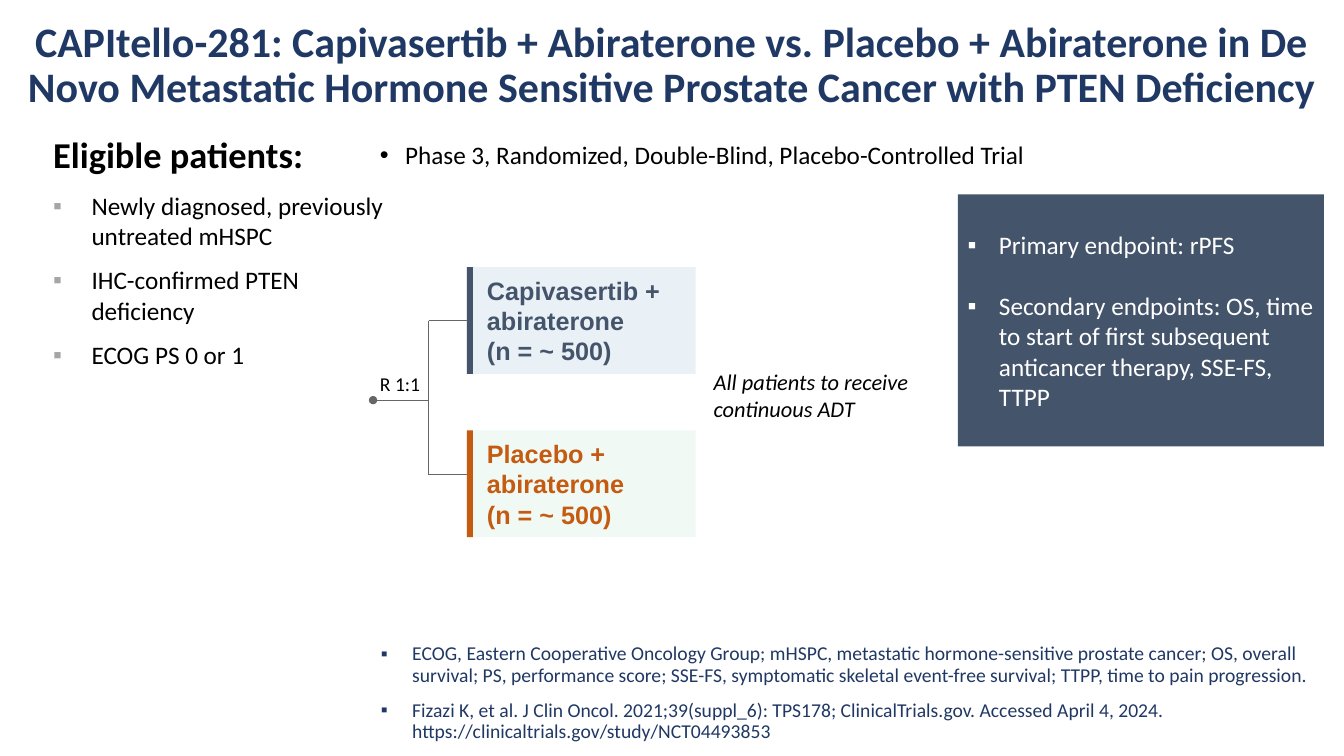
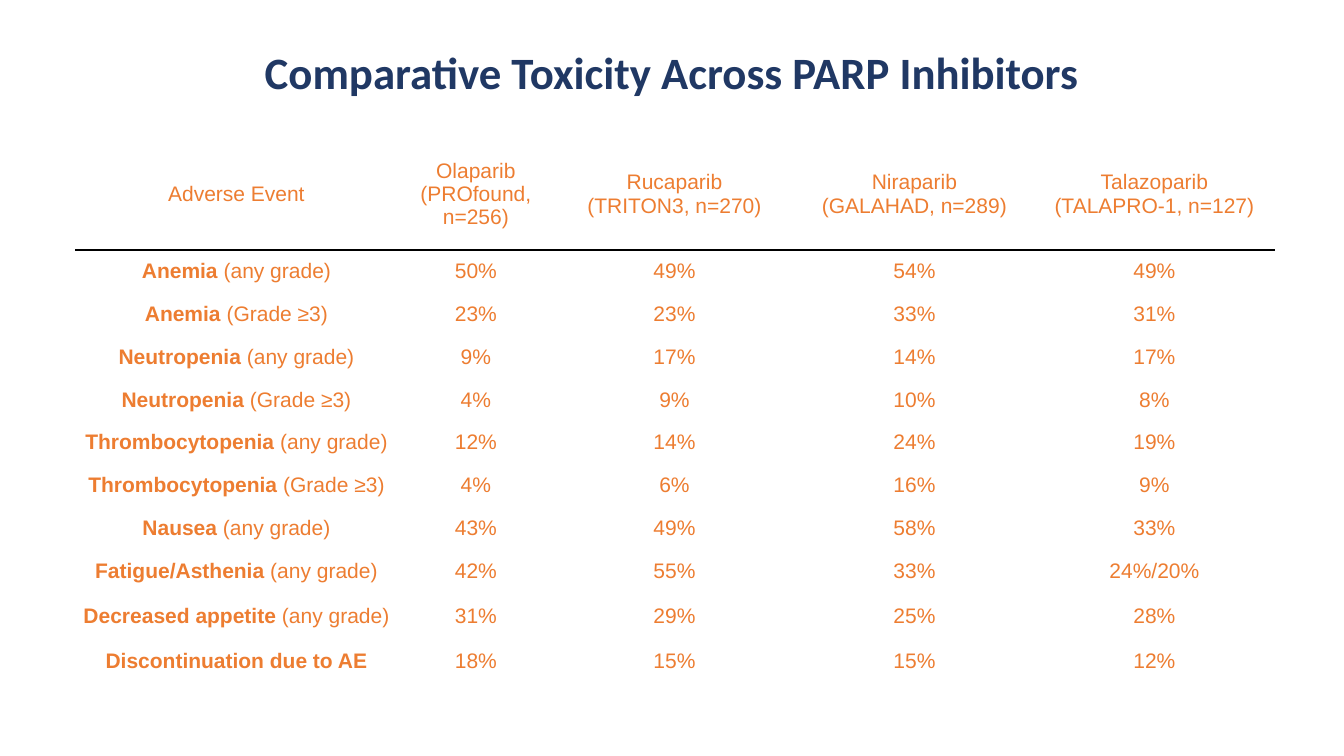
from dataclasses import dataclass

from lxml import etree
from pptx import Presentation
from pptx import util as u
from pptx.dml.color import RGBColor
from pptx.enum import shapes, text
from pptx.oxml.ns import qn

NAVY = RGBColor(0x20, 0x38, 0x64)
SLATE = RGBColor(0x44, 0x54, 0x6A)
RUST = RGBColor(0xC5, 0x5A, 0x11)
ORANGE = RGBColor(0xED, 0x7D, 0x31)
PALE_BLUE = RGBColor(0xE9, 0xF1, 0xF7)
PALE_GREEN = RGBColor(0xF0, 0xF9, 0xF3)
LINE_GRAY = RGBColor(0x66, 0x66, 0x66)
BULLET_GRAY = RGBColor(0xA5, 0xA5, 0xA5)
BLACK = RGBColor(0, 0, 0)
WHITE = RGBColor(0xFF, 0xFF, 0xFF)
BODY_FONT, ARM_FONT = "Calibri", "Arial"
SLIDE_W, SLIDE_H = 13.33, 7.5
TITLE_H = 0.78
SQUARE, DOT = "▪", "•"


@dataclass(frozen=True)
class Box:
    """A region of the slide, in inches."""
    left: float
    top: float
    width: float
    height: float

    def inner(self, left, top, width, height):
        """A box given relative to this one's top left corner."""
        return Box(self.left + left, self.top + top, width, height)

    def emu(self):
        return [u.Inches(v) for v in (self.left, self.top, self.width, self.height)]


def style(paragraph, size, color, font=BODY_FONT, bold=False, italic=False):
    face = paragraph.font
    face.name, face.size = font, u.Pt(size)
    face.bold, face.italic = bold, italic
    face.color.rgb = color


def add_bullet(paragraph, char, indent, color=None):
    props = paragraph._p.get_or_add_pPr()
    props.set("marL", str(u.Inches(indent)))
    props.set("indent", str(-u.Inches(indent)))
    if color is not None:
        tint = etree.SubElement(props, qn("a:buClr"))
        etree.SubElement(tint, qn("a:srgbClr"), val=str(color))
    etree.SubElement(props, qn("a:buFont"), typeface="Arial")
    etree.SubElement(props, qn("a:buChar"), char=char)


def write(frame, lines, size, color, bullet=None, spacing=1.0, gap=0, **face):
    """Fill a frame with equally styled paragraphs; bullet is (char, indent[, color])."""
    frame.word_wrap = True
    for index, line in enumerate(lines):
        paragraph = frame.paragraphs[0] if index == 0 else frame.add_paragraph()
        paragraph.text = line
        paragraph.line_spacing = spacing
        if index:
            paragraph.space_before = u.Pt(gap)
        if bullet:
            add_bullet(paragraph, *bullet)
        style(paragraph, size, color, **face)


def add_text(slide, box, lines, size, color, **options):
    frame = slide.shapes.add_textbox(*box.emu()).text_frame
    write(frame, lines, size, color, **options)
    return frame


def add_panel(slide, box, fill):
    panel = slide.shapes.add_shape(shapes.MSO_SHAPE.RECTANGLE, *box.emu())
    panel.shadow.inherit = False
    panel.fill.solid()
    panel.fill.fore_color.rgb = fill
    panel.line.fill.background()
    frame = panel.text_frame
    frame.vertical_anchor = text.MSO_ANCHOR.MIDDLE
    return frame


def add_line(slide, start, end, tail=None):
    line = slide.shapes.add_connector(
        shapes.MSO_CONNECTOR.STRAIGHT, *(u.Inches(v) for v in (*start, *end)))
    line.line.color.rgb = LINE_GRAY
    line.line.width = u.Pt(0.75)
    if tail:
        etree.SubElement(line.line._get_or_add_ln(), qn("a:tailEnd"), type=tail)
    etree.SubElement(line._element.spPr, qn("a:effectLst"))


def titled_slide(deck, title, top, size):
    slide = deck.slides.add_slide(deck.slide_layouts[5])
    heading = slide.shapes.title
    heading.left, heading.top, heading.width, heading.height = Box(
        0, top, SLIDE_W, TITLE_H).emu()
    frame = heading.text_frame
    frame.auto_size = text.MSO_AUTO_SIZE.NONE
    frame.vertical_anchor = text.MSO_ANCHOR.MIDDLE
    write(frame, [title], size, NAVY, spacing=0.9, bold=True)
    frame.paragraphs[0].alignment = text.PP_ALIGN.CENTER
    return slide


def eligibility(slide, box):
    frame = add_text(slide, box, ["Eligible patients:"], 26, BLACK, spacing=0.9, bold=True)
    for criterion in ("Newly diagnosed, previously untreated mHSPC",
                      "IHC-confirmed PTEN deficiency", "ECOG PS 0 or 1"):
        paragraph = frame.add_paragraph()
        paragraph.text = criterion
        paragraph.space_before = u.Pt(10)
        add_bullet(paragraph, SQUARE, 0.38, BULLET_GRAY)
        style(paragraph, 18, BLACK)


def randomization(slide, box):
    """Stem and fork on the left, one panel for each treatment arm on the right."""
    arm_left, arm_h, bar_w = 0.93, 1.06, 0.06
    fork_x, stem_y = box.left + 0.55, box.top + 1.32
    fork_ys = (box.top + 0.53, box.top + 2.06)
    add_line(slide, (fork_x, fork_ys[0]), (fork_x, fork_ys[1]))
    for y in fork_ys:
        add_line(slide, (fork_x, y), (box.left + arm_left, y))
    add_line(slide, (fork_x, stem_y), (box.left, stem_y), tail="oval")
    arms = (("Capivasertib + abiraterone", PALE_BLUE, SLATE, 0),
            ("Placebo + abiraterone", PALE_GREEN, RUST, box.height - arm_h))
    for treatment, fill, accent, top in arms:
        frame = add_panel(
            slide, box.inner(arm_left, top, box.width - arm_left, arm_h), fill)
        frame.margin_left = frame.margin_right = u.Inches(0.2)
        frame.margin_top = frame.margin_bottom = 0
        write(frame, [treatment, "(n = ~ 500)"], 18, accent, font=ARM_FONT, bold=True)
        for paragraph in frame.paragraphs:
            paragraph.alignment = text.PP_ALIGN.LEFT
        add_panel(slide, box.inner(arm_left, top, bar_w, arm_h), accent)
    add_text(slide, box.inner(-0.03, 0.99, 0.85, 0.34), ["R 1:1"], 14, BLACK)


def endpoints(slide, box):
    frame = add_panel(slide, box, SLATE)
    write(frame, ["Primary endpoint: rPFS",
                  "Secondary endpoints: OS, time to start of first subsequent "
                  "anticancer therapy, SSE-FS, TTPP"],
          18, WHITE, bullet=(SQUARE, 0.31), gap=22)
    for paragraph in frame.paragraphs:
        paragraph.alignment = text.PP_ALIGN.LEFT


def trial_slide(deck):
    slide = titled_slide(
        deck, "CAPItello-281: Capivasertib + Abiraterone vs. Placebo + Abiraterone in De "
        "Novo Metastatic Hormone Sensitive Prostate Cancer with PTEN Deficiency", 0.27, 30)
    add_text(slide, Box(3.67, 1.37, 9.63, 0.5),
             ["Phase 3, Randomized, Double-Blind, Placebo-Controlled Trial"],
             18, BLACK, bullet=(DOT, 0.25), spacing=0.9)
    add_text(slide, Box(3.68, 6.34, 9.63, 1.1),
             ["ECOG, Eastern Cooperative Oncology Group; mHSPC, metastatic "
              "hormone-sensitive prostate cancer; OS, overall survival; PS, performance "
              "score; SSE-FS, symptomatic skeletal event-free survival; TTPP, time to "
              "pain progression.",
              "Fizazi K, et al. J Clin Oncol. 2021;39(suppl_6): TPS178; "
              "ClinicalTrials.gov. Accessed April 4, 2024. "
              "https://clinicaltrials.gov/study/NCT04493853"],
             14, NAVY, bullet=(SQUARE, 0.31), spacing=0.9, gap=10)
    eligibility(slide, Box(0.43, 1.31, 3.7, 6.12))
    randomization(slide, Box(3.7, 2.65, 3.2, 2.68))
    endpoints(slide, Box(9.5, 1.93, 3.63, 2.5))
    add_text(slide, Box(6.98, 3.6, 2.44, 0.64),
             ["All patients to receive continuous ADT"], 16, BLACK, italic=True)


TRIALS = ("Adverse Event", "Olaparib\v(PROfound, n=256)", "Rucaparib\v(TRITON3, n=270)",
          "Niraparib\v(GALAHAD, n=289)", "Talazoparib\v(TALAPRO-1, n=127)")
EVENTS = (
    ("Anemia", " (any grade)", "50%", "49%", "54%", "49%"),
    ("Anemia", " (Grade ≥3)", "23%", "23%", "33%", "31%"),
    ("Neutropenia", " (any grade)", "9%", "17%", "14%", "17%"),
    ("Neutropenia", " (Grade ≥3)", "4%", "9%", "10%", "8%"),
    ("Thrombocytopenia", " (any grade)", "12%", "14%", "24%", "19%"),
    ("Thrombocytopenia", " (Grade ≥3)", "4%", "6%", "16%", "9%"),
    ("Nausea", " (any grade)", "43%", "49%", "58%", "33%"),
    ("Fatigue/Asthenia", " (any grade)", "42%", "55%", "33%", "24%/20%"),
    ("Decreased appetite", " (any grade)", "31%", "29%", "25%", "28%"),
    ("Discontinuation due to AE", "", "18%", "15%", "15%", "12%"),
)


def add_rule(cell, edge):
    """Draw a black line on one edge of a cell: lnT or lnB."""
    line = etree.Element(qn(f"a:{edge}"), w=str(u.Pt(1)))
    fill = etree.SubElement(line, qn("a:solidFill"))
    etree.SubElement(fill, qn("a:srgbClr"), val=str(BLACK))
    cell._tc.get_or_add_tcPr().insert(0, line)


def fill_cell(cell, content, grade=None):
    """Write a cell; with a grade, the content is a bold event name before it."""
    cell.fill.background()
    cell.vertical_anchor = text.MSO_ANCHOR.MIDDLE
    cell.margin_left = cell.margin_right = u.Inches(0.06)
    cell.margin_top = cell.margin_bottom = u.Inches(0.03)
    paragraph = cell.text_frame.paragraphs[0]
    paragraph.text = content
    paragraph.alignment = text.PP_ALIGN.CENTER
    style(paragraph, 15, ORANGE, font=ARM_FONT)
    if grade is not None:
        paragraph.runs[0].font.bold = True
    if grade:
        paragraph.add_run().text = grade


def toxicity_table(slide, box):
    table = slide.shapes.add_table(len(EVENTS) + 1, len(TRIALS), *box.emu()).table
    table.first_row = table.horz_banding = False
    for column, width in zip(table.columns, (3.19, 1.56, 2.38, 2.38, 2.38)):
        column.width = u.Inches(width)
    header_h, appetite_h, appetite_row = 1.11, 0.47, 9
    event_h = (box.height - header_h - appetite_h) / (len(EVENTS) - 1)
    special = {0: header_h, appetite_row: appetite_h}
    for index, row in enumerate(table.rows):
        row.height = u.Inches(special.get(index, event_h))
    for col, trial in enumerate(TRIALS):
        fill_cell(table.cell(0, col), trial)
    for row, (event, grade, *rates) in enumerate(EVENTS, 1):
        fill_cell(table.cell(row, 0), event, grade)
        for col, rate in enumerate(rates, 1):
            fill_cell(table.cell(row, col), rate)
    for col in range(len(TRIALS)):
        add_rule(table.cell(0, col), "lnB")
        add_rule(table.cell(1, col), "lnT")


def toxicity_slide(deck):
    slide = titled_slide(deck, "Comparative Toxicity Across PARP Inhibitors", 0.35, 32)
    toxicity_table(slide, Box(0.75, 1.37, 11.89, 5.4))


def main():
    deck = Presentation()
    deck.slide_width, deck.slide_height = u.Inches(SLIDE_W), u.Inches(SLIDE_H)
    trial_slide(deck)
    toxicity_slide(deck)
    deck.save("out.pptx")


if __name__ == "__main__":
    main()
